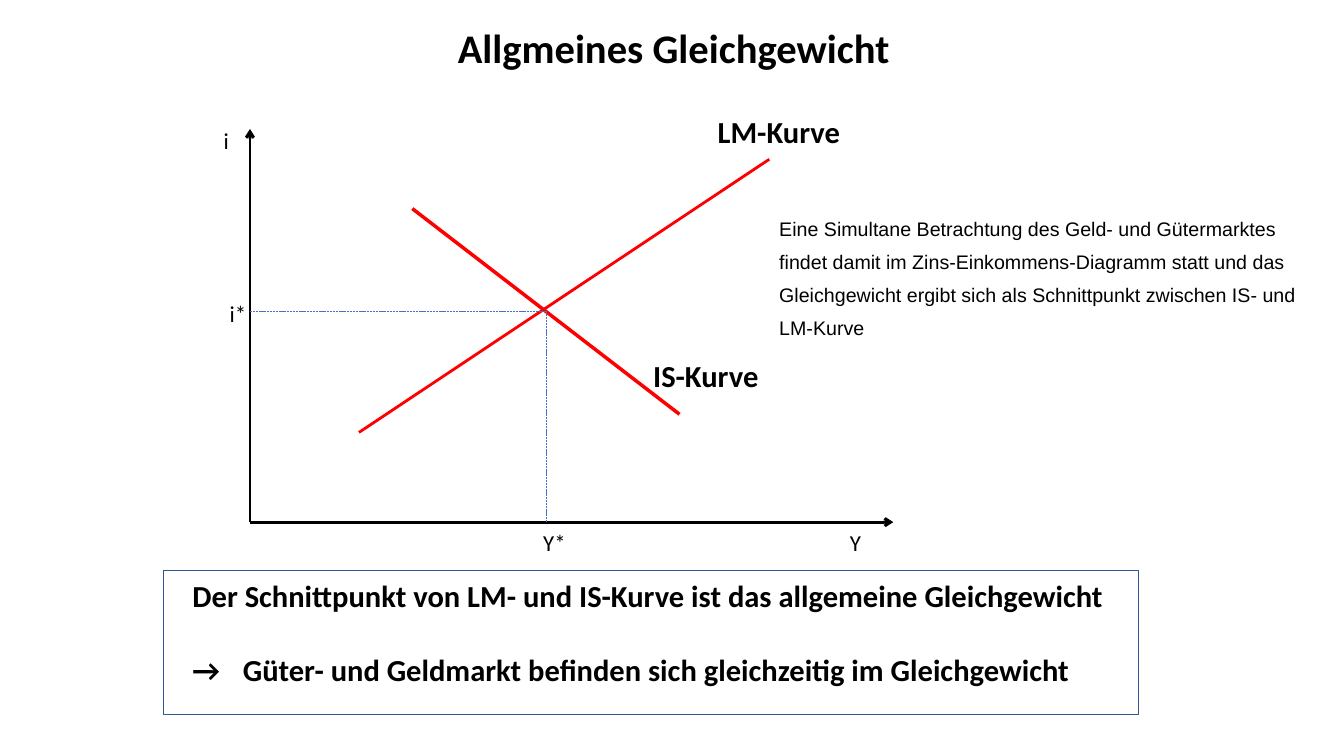
from lxml.etree import SubElement as Sub
from pptx import Presentation
from pptx.dml.color import RGBColor
from pptx.enum.dml import MSO_LINE as Dash
from pptx.enum.shapes import MSO_CONNECTOR as Conn, MSO_SHAPE as Kind
from pptx.enum.text import MSO_ANCHOR as Anchor, MSO_AUTO_SIZE as Fit, PP_ALIGN as Align
from pptx.oxml.ns import qn
from pptx.util import Inches, Pt

BLACK = RGBColor(0, 0, 0)
RED = RGBColor(0xFF, 0, 0)
BLUE = RGBColor(0x44, 0x72, 0xC4)
NAVY = RGBColor(0x32, 0x54, 0x91)

WIDE, HIGH = Inches(13.33), Inches(7.5)
LEFT, BASE = 18.6, 69.07
EQ_X, EQ_Y = 40.66, 41.2
SMALL, LARGE = 16.3, 21.8


def across(share):
    return round(WIDE * share / 100)


def down(share):
    return round(HIGH * share / 100)


def area(x, y, w, h):
    return across(x), down(y), across(w), down(h)


def style(par, size, bold=False, face="Calibri"):
    font = par.font
    font.name, font.size, font.bold = face, Pt(size), bold
    font.color.rgb = BLACK


def title(slide, text):
    head = slide.shapes.title
    head.left, head.top, head.width, head.height = area(18.98, 0.8, 62.34, 10.8)
    frame = head.text_frame
    frame.text = text
    frame.auto_size = Fit.NONE
    frame.vertical_anchor = Anchor.MIDDLE
    par = frame.paragraphs[0]
    par.alignment = Align.CENTER
    style(par, 29, True)


def words(slide, text, place, size, bold=False, face="Calibri", wrap=False):
    frame = slide.shapes.add_textbox(*area(*place)).text_frame
    frame.word_wrap = wrap
    frame.auto_size = Fit.NONE if wrap else Fit.SHAPE_TO_FIT_TEXT
    frame.text = text
    for par in frame.paragraphs:
        style(par, size, bold, face)
    return frame.paragraphs


def line(slide, start, end, color, width, dash=None, arrow=False):
    (x1, y1), (x2, y2) = start, end
    link = slide.shapes.add_connector(
        Conn.STRAIGHT, across(x1), down(y1), across(x2), down(y2))
    link.line.color.rgb = color
    link.line.width = Pt(width)
    if dash:
        link.line.dash_style = dash
    if arrow:
        Sub(link.line._get_or_add_ln(), qn("a:tailEnd"), type="arrow")
    Sub(link._element.spPr, qn("a:effectLst"))


def graph(slide):
    for tip in ((LEFT, 17.07), (66.47, BASE)):
        line(slide, (LEFT, BASE), tip, BLACK, 2, arrow=True)
    line(slide, (26.71, 57.2), (57.24, 21.07), RED, 2)
    line(slide, (30.68, 27.6), (50.56, 54.8), RED, 2.5)
    for foot in ((LEFT, EQ_Y), (EQ_X, BASE)):
        line(slide, (EQ_X, EQ_Y), foot, BLUE, 0.5, Dash.SQUARE_DOT)
    for text, x, y, w in (("i", 15.9, 16.13, 1.88), ("Y", 62.49, 69.33, 2.33),
                          ("Y*", 39.68, 69.33, 3.23), ("i*", 16.35, 38.93, 2.78)):
        words(slide, text, (x, y, w, 5.07), SMALL)
    for text, x, y, w in (("IS-Kurve", 47.86, 46.53, 9.38),
                          ("LM-Kurve", 52.66, 14.27, 10.65)):
        words(slide, text, (x, y, w, 6.27), LARGE, True)


def result(slide):
    pars = words(
        slide,
        "Der Schnittpunkt von LM- und IS-Kurve ist das allgemeine Gleichgewicht\n"
        "→\tGüter- und Geldmarkt befinden sich gleichzeitig im Gleichgewicht",
        (13.58, 75.73, 71.12, 16), LARGE, True)
    pars[1].space_before = Pt(26.6)
    box = slide.shapes.add_shape(Kind.RECTANGLE, *area(12.15, 75.47, 72.54, 19.07))
    box.shadow.inherit = False
    box.fill.background()
    box.line.color.rgb = NAVY
    box.line.width = Pt(1)


def note(slide):
    par = words(
        slide,
        "Eine Simultane Betrachtung des Geld- und Gütermarktes findet damit im "
        "Zins-Einkommens-Diagramm statt und das Gleichgewicht ergibt sich als "
        "Schnittpunkt zwischen IS- und LM-Kurve",
        (57.24, 26.8, 41.64, 23.2), 14, face="Arial", wrap=True)[0]
    par.line_spacing = 1.4
    par.space_before = Pt(2.8)


def main():
    deck = Presentation()
    deck.slide_width, deck.slide_height = WIDE, HIGH
    slide = deck.slides.add_slide(deck.slide_layouts[5])
    title(slide, "Allgmeines Gleichgewicht")
    graph(slide)
    result(slide)
    note(slide)
    deck.save("out.pptx")


if __name__ == "__main__":
    main()
